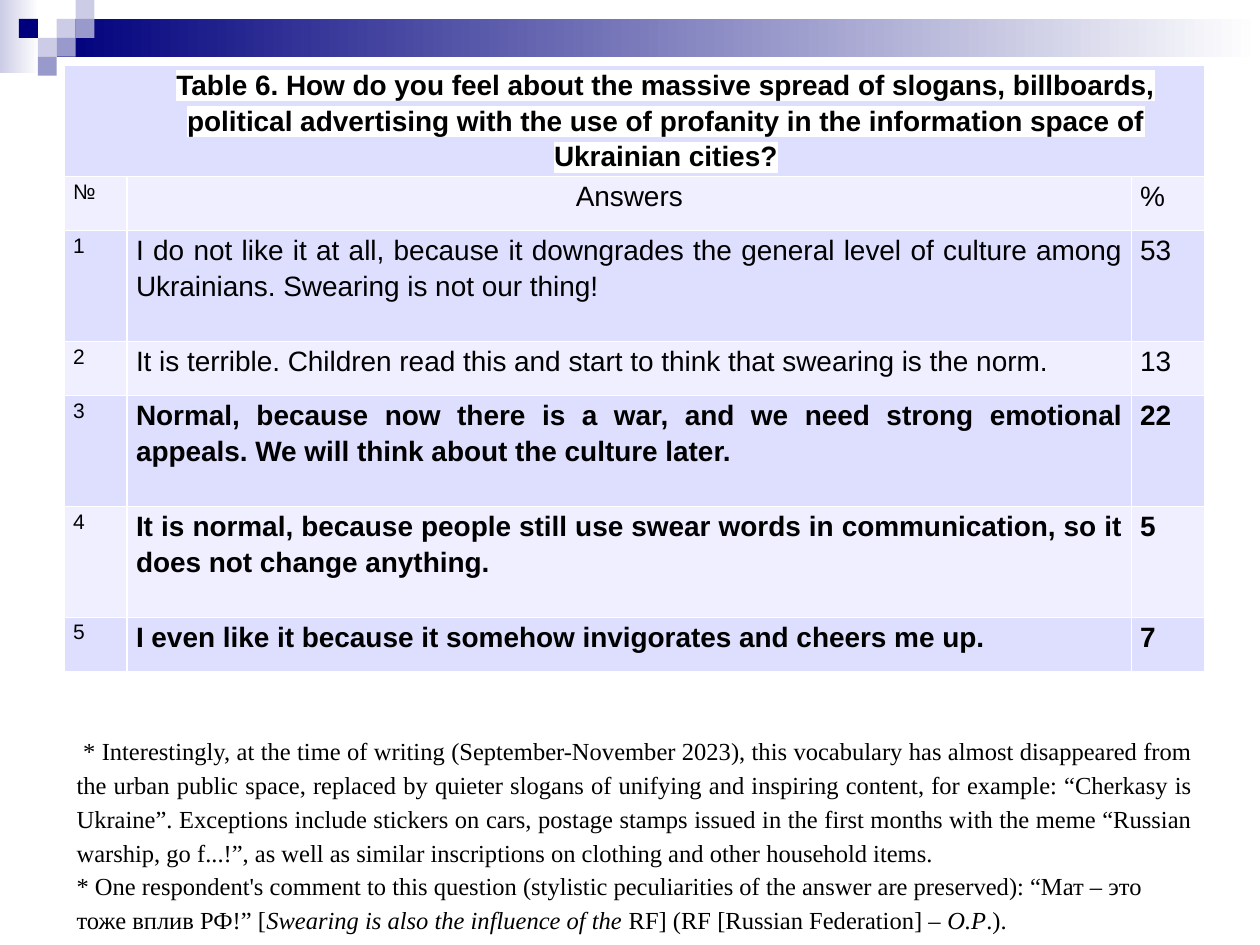
import pptx
import pptx.util
from lxml import etree
from pptx.dml.color import RGBColor
from pptx.enum.shapes import MSO_SHAPE
from pptx.enum.text import MSO_ANCHOR, PP_ALIGN
from pptx.oxml.ns import qn
from pptx.util import Inches, Pt

WHITE = RGBColor(0xFF, 0xFF, 0xFF)
BLACK = RGBColor(0x00, 0x00, 0x00)
NAVY = RGBColor(0x00, 0x00, 0x7D)
LAVENDER = RGBColor(0xCC, 0xCC, 0xE6)
VIOLET = RGBColor(0x99, 0x99, 0xCC)
DARK_BAND = RGBColor(0xDE, 0xDE, 0xFF)
LIGHT_BAND = RGBColor(0xEF, 0xEF, 0xFF)

# left, top, width, height, start colour of the fade to white
FADES = [(0, 0, 0.31, 0.58, LAVENDER), (0.45, 0.15, 9.55, 0.3, NAVY)]
SQUARE = 0.15
# column and row on the grid of small squares
SQUARES = [(3, 1, LAVENDER), (4, 0, LAVENDER), (4, 1, VIOLET), (2, 2, LAVENDER),
           (1, 1, NAVY), (3, 2, VIOLET), (2, 3, VIOLET)]

TITLE = ("Table 6. How do you feel about the massive spread of slogans, billboards, "
         "political advertising with the use of profanity in the information space of "
         "Ukrainian cities?")
# number, answer, percentage, bold
ANSWERS = [
    ("№", "Answers", "%", False),
    ("1", "I do not like it at all, because it downgrades the general level of culture "
          "among Ukrainians. Swearing is not our thing!", "53", False),
    ("2", "It is terrible. Children read this and start to think that swearing is the "
          "norm.", "13", False),
    ("3", "Normal, because now there is a war, and we need strong emotional appeals. "
          "We will think about the culture later.", "22", True),
    ("4", "It is normal, because people still use swear words in communication, so it "
          "does not change anything.", "5", True),
    ("5", "I even like it because it somehow invigorates and cheers me up.", "7", True),
]
COLUMN_WIDTHS = [0.5, 7.97, 0.58]
ROW_HEIGHTS = [0.88, 0.43, 0.88, 0.43, 0.88, 0.88, 0.43]

# alignment, then (text, italic) spans
NOTES = [
    (PP_ALIGN.JUSTIFY, [
        (" * Interestingly, at the time of writing (September-November 2023), this "
         "vocabulary has almost disappeared from the urban public space, replaced by "
         "quieter slogans of unifying and inspiring content, for example: “Cherkasy is "
         "Ukraine”. Exceptions include stickers on cars, postage stamps issued in the "
         "first months with the meme “Russian warship, go f...!”, as well as similar "
         "inscriptions on clothing and other household items.", False)]),
    (PP_ALIGN.LEFT, [
        ("* One respondent's comment to this question (stylistic peculiarities of the "
         "answer are preserved): “Мат – это тоже вплив РФ!” [", False),
        ("Swearing is also the influence of the ", True),
        ("RF] (RF [Russian Federation] – ", False),
        ("O.P", True),
        (".).", False)]),
]


def add_rectangle(slide, left, top, width, height):
    shape = slide.shapes.add_shape(MSO_SHAPE.RECTANGLE, Inches(left), Inches(top),
                                   Inches(width), Inches(height))
    shape.shadow.inherit = False
    shape.line.fill.background()
    return shape


def add_banner(slide):
    for left, top, width, height, colour in FADES:
        fill = add_rectangle(slide, left, top, width, height).fill
        fill.gradient()
        fill.gradient_angle = 0
        for stop, stop_colour, position in zip(fill.gradient_stops, (colour, WHITE), (0, 1)):
            stop.color.rgb = stop_colour
            stop.position = position
    for column, row, colour in SQUARES:
        fill = add_rectangle(slide, column * SQUARE, row * SQUARE, SQUARE, SQUARE).fill
        fill.solid()
        fill.fore_color.rgb = colour


def format_span(span, font_name, size, bold=False, italic=False):
    span.font.name = font_name
    span.font.size = Pt(size)
    span.font.bold = bold
    span.font.italic = italic
    span.font.color.rgb = BLACK


def highlight(span, colour):
    fill = span.font._element.find(qn("a:solidFill"))
    mark = etree.Element(qn("a:highlight"))
    etree.SubElement(mark, qn("a:srgbClr"), val=str(colour))
    fill.addnext(mark)


def add_borders(cell):
    properties = cell._tc.get_or_add_tcPr()
    for index, side in enumerate(("a:lnL", "a:lnR", "a:lnT", "a:lnB")):
        line = etree.Element(qn(side), w=str(Pt(1)))
        fill = etree.SubElement(line, qn("a:solidFill"))
        etree.SubElement(fill, qn("a:srgbClr"), val=str(WHITE))
        properties.insert(index, line)


def write_cell(cell, text, size, bold, alignment):
    cell.text_frame.text = text
    para = cell.text_frame.paragraphs[0]
    para.alignment = alignment
    para.line_spacing = 1.15
    format_span(para.runs[0], "Arial", size, bold)
    return para


def add_answer_table(slide):
    table = slide.shapes.add_table(
        len(ROW_HEIGHTS), len(COLUMN_WIDTHS), Inches(0.51), Inches(0.52),
        Inches(sum(COLUMN_WIDTHS)), Inches(sum(ROW_HEIGHTS))).table
    for column, width in zip(table.columns, COLUMN_WIDTHS):
        column.width = Inches(width)
    for index, (row, height) in enumerate(zip(table.rows, ROW_HEIGHTS)):
        row.height = Inches(height)
        for cell in row.cells:
            cell.margin_left = cell.margin_right = Inches(0.07)
            cell.margin_top = cell.margin_bottom = 0
            cell.vertical_anchor = MSO_ANCHOR.TOP
            cell.fill.solid()
            cell.fill.fore_color.rgb = LIGHT_BAND if index % 2 else DARK_BAND
            add_borders(cell)

    table.cell(0, 0).merge(table.cell(0, len(COLUMN_WIDTHS) - 1))
    heading = write_cell(table.cell(0, 0), TITLE, 16, True, PP_ALIGN.CENTER)
    heading.space_after = Pt(10)
    heading._p.get_or_add_pPr().set("marL", str(Inches(0.5)))
    highlight(heading.runs[0], WHITE)

    for row, (number, answer, percentage, bold) in enumerate(ANSWERS, start=1):
        answer_alignment = PP_ALIGN.CENTER if row == 1 else PP_ALIGN.JUSTIFY
        write_cell(table.cell(row, 0), number, 12, False, PP_ALIGN.JUSTIFY)
        write_cell(table.cell(row, 1), answer, 16, bold, answer_alignment)
        write_cell(table.cell(row, 2), percentage, 16, bold, PP_ALIGN.JUSTIFY)


def add_notes_box(slide):
    box = slide.shapes.add_textbox(Inches(0.51), Inches(5.76), Inches(9.06), Inches(1.73))
    frame = box.text_frame
    frame.word_wrap = True
    for index, (alignment, spans) in enumerate(NOTES):
        para = frame.add_paragraph() if index else frame.paragraphs[0]
        para.alignment = alignment
        para.line_spacing = 1.15
        for text, italic in spans:
            span = para.add_run()
            span.text = text
            format_span(span, "Times New Roman", 14, italic=italic)


def main():
    deck = pptx.Presentation()
    deck.slide_width, deck.slide_height = Inches(10), Inches(7.5)
    slide = deck.slides.add_slide(deck.slide_layouts[6])
    add_banner(slide)
    add_answer_table(slide)
    add_notes_box(slide)
    deck.save("out.pptx")


if __name__ == "__main__":
    main()
